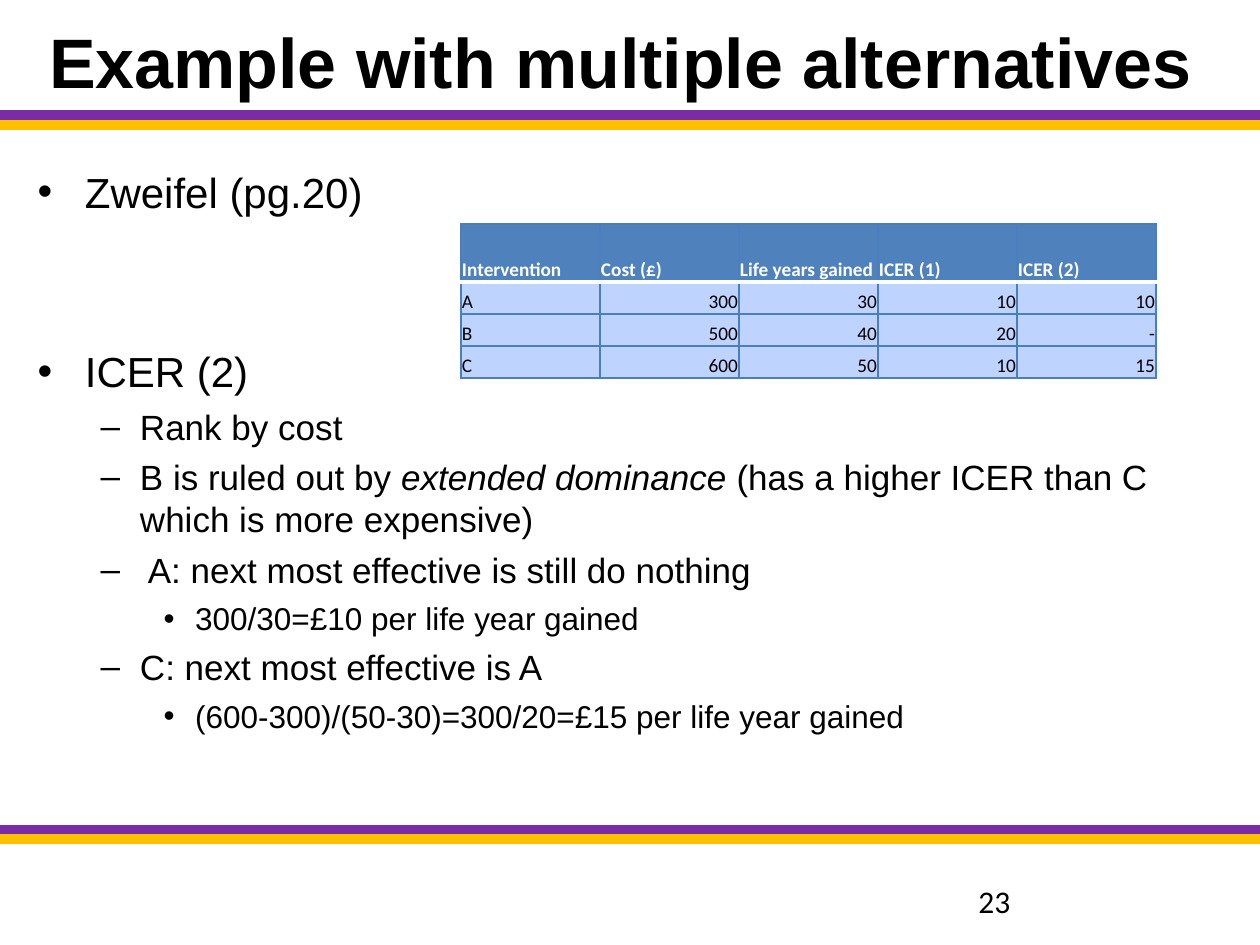
"""Build the slide on cost-effectiveness ratios with multiple alternatives."""
import pptx
import pptx.util
import pptx.dml.color
import pptx.enum.shapes
import pptx.enum.text
import pptx.oxml
import pptx.oxml.ns

TITLE = "Example with multiple alternatives"
PAGE_NUMBER = "23"
BULLETS = [
    (0, 0, ["Zweifel (pg.20)"]),
    (0, 74, ["ICER (2)"]),
    (1, 5, ["Rank by cost"]),
    (1, 5, ["B is ruled out by ", "extended dominance ",
            "(has a higher ICER than C which is more expensive)"]),
    (1, 5, [" A: next most effective is still do nothing"]),
    (2, 5, ["300/30=£10 per life year gained"]),
    (1, 5, ["C: next most effective is A"]),
    (2, 5, ["(600-300)/(50-30)=300/20=£15 per life year gained"]),
]
ITALIC = "extended dominance "
TABLE = [
    ["Intervention", "Cost (£)", "Life years gained", "ICER (1)", "ICER (2)"],
    ["A", "300", "30", "10", "10"],
    ["B", "500", "40", "20", "-"],
    ["C", "600", "50", "10", "15"],
]
LEVEL_SIZES = [24, 20, 18]
COLORS = {"text": "000000", "white": "FFFFFF", "purple": "7A2CA6", "gold": "FFC000",
          "header": "4F81BD", "row": "BFD3FF", "border": "4B7EBC"}
RULES = [(830, "purple"), (839, "gold"), (125, "gold"), (115, "purple")]
HEADER_HEIGHT, ROW_HEIGHT, COLUMN_WIDTH = 58, 32, 139
ALIGN = pptx.enum.text.PP_ALIGN
ANCHOR = pptx.enum.text.MSO_ANCHOR


def px(length):
    return pptx.util.Emu(round(length * 914400 / 126))


def rgb(name):
    return pptx.dml.color.RGBColor.from_string(COLORS[name])


def style(span, size, color="text", name="Arial", bold=False):
    span.font.size = pptx.util.Pt(size)
    span.font.name = name
    span.font.bold = bold
    span.font.color.rgb = rgb(color)


def place(shape, left, top, width, height):
    shape.left, shape.top, shape.width, shape.height = map(px, (left, top, width, height))


def add_rule(page, y, color):
    line = page.shapes.add_connector(
        pptx.enum.shapes.MSO_CONNECTOR.STRAIGHT, 0, px(y), px(1260), px(y))
    line.line.color.rgb = rgb(color)
    line.line.width = pptx.util.Pt(6)
    line._element.spPr.append(pptx.oxml.parse_xml(
        f"<a:effectLst {pptx.oxml.ns.nsdecls('a')}/>"))


def add_border(cell, side, color, points):
    cell._tc.get_or_add_tcPr().append(pptx.oxml.parse_xml(
        f"<a:ln{side} {pptx.oxml.ns.nsdecls('a')} w='{int(points * 12700)}'>"
        f"<a:solidFill><a:srgbClr val='{COLORS[color]}'/></a:solidFill></a:ln{side}>"))


def format_cell(cell, text, row, column):
    header = row == 0
    cell.text_frame.text = text
    cell.vertical_anchor = ANCHOR.BOTTOM
    cell.margin_left = cell.margin_right = cell.margin_top = px(1)
    cell.margin_bottom = 0
    white_side = {0: "B", 1: "T"}.get(row)
    for side in "LRTB":
        add_border(cell, side, *(("white", 2) if side == white_side else ("border", 0.75)))
    cell.fill.solid()
    cell.fill.fore_color.rgb = rgb("header" if header else "row")
    paragraph = cell.text_frame.paragraphs[0]
    paragraph.alignment = ALIGN.LEFT if header or column == 0 else ALIGN.RIGHT
    style(paragraph.runs[0], 11, "white" if header else "text", "Calibri", header)


def add_title(page):
    title = page.shapes.title
    place(title, 25, 26, 1191, 68)
    title.text_frame.text = TITLE
    title.text_frame.auto_size = pptx.enum.text.MSO_AUTO_SIZE.NONE
    title.text_frame.vertical_anchor = ANCHOR.MIDDLE
    title.text_frame.paragraphs[0].alignment = ALIGN.CENTER
    style(title.text_frame.paragraphs[0].runs[0], 40, bold=True)


def add_bullets(page):
    body = page.placeholders[1]
    place(body, 25, 156, 1211, 624)
    frame = body.text_frame
    frame.auto_size = pptx.enum.text.MSO_AUTO_SIZE.NONE
    frame.margin_top = px(10)
    for index, (level, space, spans) in enumerate(BULLETS):
        paragraph = frame.add_paragraph() if index else frame.paragraphs[0]
        paragraph.level = level
        paragraph.space_before = pptx.util.Pt(space)
        for text in spans:
            span = paragraph.add_run()
            span.text = text
            style(span, LEVEL_SIZES[level])
            span.font.italic = text == ITALIC


def add_number(page):
    box = page.shapes.add_textbox(px(966), px(876), px(294), px(50))
    box.text_frame.word_wrap = True
    box.text_frame.text = PAGE_NUMBER
    style(box.text_frame.paragraphs[0].runs[0], 18, name="Calibri")


def add_table(page):
    rows, columns = len(TABLE), len(TABLE[0])
    height = HEADER_HEIGHT + (rows - 1) * ROW_HEIGHT
    table = page.shapes.add_table(
        rows, columns, px(461), px(224), px(columns * COLUMN_WIDTH), px(height)).table
    for column in table.columns:
        column.width = px(COLUMN_WIDTH)
    for row, texts in enumerate(TABLE):
        table.rows[row].height = px(ROW_HEIGHT if row else HEADER_HEIGHT)
        for column, text in enumerate(texts):
            format_cell(table.cell(row, column), text, row, column)


def main():
    deck = pptx.Presentation()
    deck.slide_width, deck.slide_height = px(1260), px(945)
    page = deck.slides.add_slide(deck.slide_layouts[1])
    for y, color in RULES:
        add_rule(page, y, color)
    add_title(page)
    add_bullets(page)
    add_number(page)
    add_table(page)
    deck.save("out.pptx")


if __name__ == "__main__":
    main()
